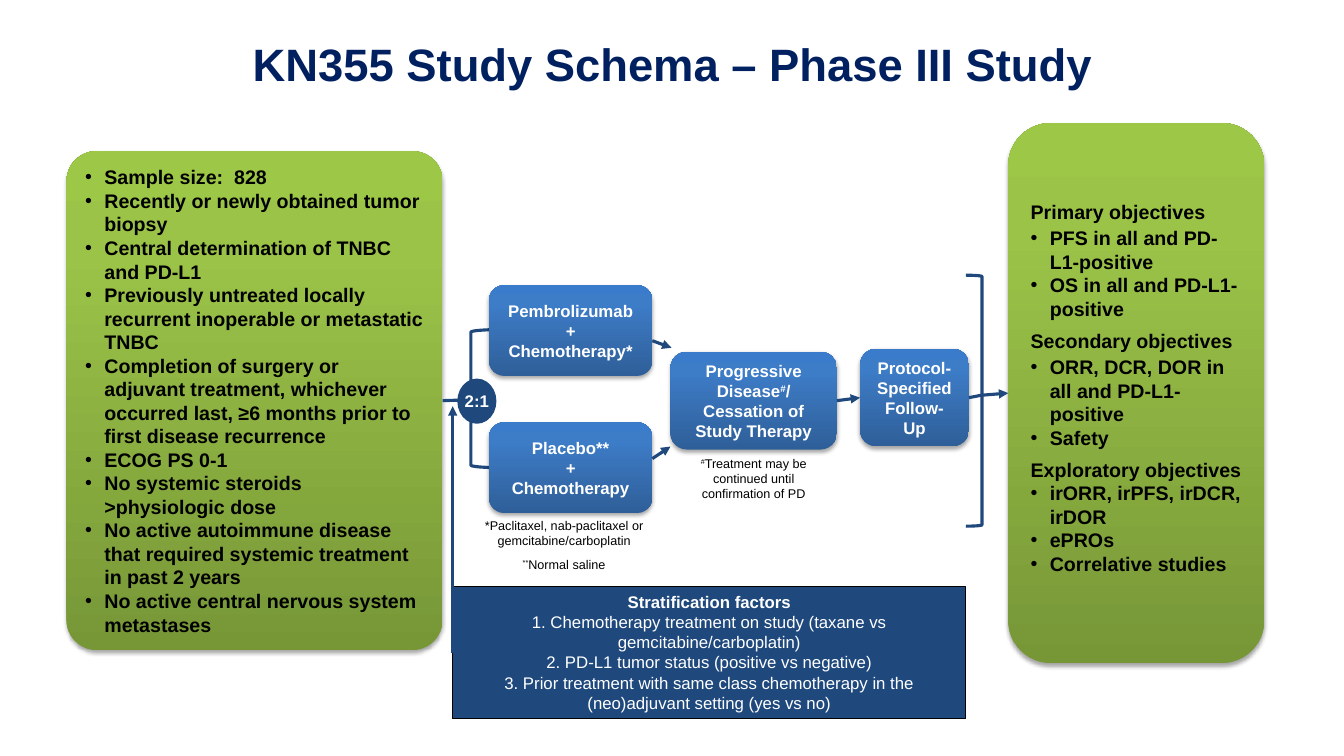
from lxml import etree
from pptx import Presentation
from pptx.dml.color import RGBColor
from pptx.enum.shapes import MSO_CONNECTOR, MSO_SHAPE
from pptx.enum.text import MSO_ANCHOR, PP_ALIGN
from pptx.oxml import parse_xml
from pptx.oxml.ns import nsdecls, qn
from pptx.util import Inches, Pt

ROUNDED, RECTANGLE, OVAL = MSO_SHAPE.ROUNDED_RECTANGLE, MSO_SHAPE.RECTANGLE, MSO_SHAPE.OVAL
LEFT_BRACKET, RIGHT_BRACKET = MSO_SHAPE.LEFT_BRACKET, MSO_SHAPE.RIGHT_BRACKET
STRAIGHT = MSO_CONNECTOR.STRAIGHT
LEFT, CENTER = PP_ALIGN.LEFT, PP_ALIGN.CENTER
TOP, MIDDLE = MSO_ANCHOR.TOP, MSO_ANCHOR.MIDDLE

FONT = "Arial"
COLORS = {"navy": "1F497D", "title": "002060", "black": "000000", "white": "FFFFFF"}
GRADIENTS = {
    "green": [(0, "779737"), (80, "9BC348"), (100, "9DC746")],
    "blue": [(0, "2F5F99"), (80, "3D7CC7"), (100, "3A7CCB")],
}


def write(shape, paragraphs, size, color, bold=False, align=CENTER, anchor=MIDDLE):
    """Each paragraph is (text, options); text between ^ marks is superscript."""
    frame = shape.text_frame
    frame.word_wrap = True
    frame.vertical_anchor = anchor
    for number, (text, options) in enumerate(paragraphs):
        para = frame.paragraphs[0] if number == 0 else frame.add_paragraph()
        para.alignment = align
        para.space_before = Pt(options.get("before", 0))
        para.space_after = Pt(options.get("after", 0))
        if options.get("bullet"):
            properties = para._p.get_or_add_pPr()
            properties.set("marL", str(Inches(0.19)))
            properties.set("indent", str(-Inches(0.19)))
            etree.SubElement(properties, qn("a:buFont")).set("typeface", FONT)
            etree.SubElement(properties, qn("a:buChar")).set("char", "•")
        for part, words in enumerate(text.split("^")):
            if not words:
                continue
            span = para.add_run()
            span.text = words
            span.font.name = FONT
            span.font.size = Pt(size)
            span.font.bold = options.get("bold", bold)
            span.font.color.rgb = RGBColor.from_string(COLORS[color])
            if part % 2:
                span.font._element.set("baseline", "30000")


def add_panel(left, top, width, height, gradient, corner=0.1667):
    """Rounded box with a vertical gradient and a soft shadow below."""
    panel = page.shapes.add_shape(ROUNDED, Inches(left), Inches(top), Inches(width), Inches(height))
    panel.adjustments[0] = corner
    panel.line.fill.background()
    stops = "".join(
        f'<a:gs pos="{place * 1000}"><a:srgbClr val="{color}"/></a:gs>'
        for place, color in GRADIENTS[gradient])
    properties = panel._element.spPr
    properties.find(qn("a:prstGeom")).addnext(parse_xml(
        f'<a:gradFill {nsdecls("a")} rotWithShape="1"><a:gsLst>{stops}</a:gsLst>'
        '<a:lin ang="16200000" scaled="0"/></a:gradFill>'))
    properties.append(parse_xml(
        f'<a:effectLst {nsdecls("a")}><a:outerShdw blurRad="{Pt(3.1)}" dist="{Pt(1.8)}" '
        'dir="5400000" rotWithShape="0"><a:srgbClr val="000000"><a:alpha val="35000"/>'
        '</a:srgbClr></a:outerShdw></a:effectLst>'))
    return panel


deck = Presentation()
deck.slide_width, deck.slide_height = Inches(13.33), Inches(7.5)
page = deck.slides.add_slide(deck.slide_layouts[6])

# Title
title = page.shapes.add_textbox(Inches(0.67), Inches(0.3), Inches(12), Inches(0.65))
write(title, [("KN355 Study Schema – Phase III Study", {})], 32.4, "title", bold=True)

# Eligibility panel
eligibility = add_panel(0.66, 1.5, 3.73, 4.95, "green", corner=0.08)
criteria = [
    "Sample size:  828",
    "Recently or newly obtained tumor biopsy",
    "Central determination of TNBC and PD-L1",
    "Previously untreated locally recurrent inoperable or metastatic TNBC",
    "Completion of surgery or adjuvant treatment, whichever occurred last, "
    "≥6 months prior to first disease recurrence",
    "ECOG PS 0-1",
    "No systemic steroids >physiologic dose",
    "No active autoimmune disease that required systemic treatment in past 2 years",
    "No active central nervous system metastases",
]
write(eligibility, [(text, {"bullet": True}) for text in criteria], 14, "black", True, LEFT)

# Objectives panel
objectives = add_panel(10, 1.22, 2.54, 5.36, "green")
objectives.text_frame.margin_top = Inches(0.64)
write(objectives, [
    ("Primary objectives", {"after": 2}),
    ("PFS in all and PD-L1-positive", {"bullet": True}),
    ("OS in all and PD-L1-positive", {"bullet": True, "after": 6}),
    ("Secondary objectives", {"after": 2}),
    ("ORR, DCR, DOR in all and PD-L1-positive", {"bullet": True}),
    ("Safety", {"bullet": True}),
    ("Exploratory objectives", {"before": 6}),
    ("irORR, irPFS, irDCR, irDOR", {"bullet": True}),
    ("ePROs", {"bullet": True}),
    ("Correlative studies", {"bullet": True}),
], 14, "black", True, LEFT, TOP)

# Brackets around the treatment path
for kind, left, top, width, height in [
    (LEFT_BRACKET, 4.67, 3.27, 0.3, 1.37),
    (RIGHT_BRACKET, 9.58, 2.73, 0.16, 2.49),
]:
    bracket = page.shapes.add_shape(kind, Inches(left), Inches(top), Inches(width), Inches(height))
    bracket.shadow.inherit = False
    bracket.fill.background()
    bracket.line.color.rgb = RGBColor.from_string(COLORS["navy"])
    bracket.line.width = Pt(2.25)

# Stratification box and randomization circle
solid_shapes = {}
for name, kind, left, top, width, height, outline, weight in [
    ("stratification", RECTANGLE, 4.49, 5.82, 5.09, 1.31, "black", 0.75),
    ("ratio", OVAL, 4.55, 3.77, 0.36, 0.42, "navy", 2),
]:
    box = page.shapes.add_shape(kind, Inches(left), Inches(top), Inches(width), Inches(height))
    box.shadow.inherit = False
    box.fill.solid()
    box.fill.fore_color.rgb = RGBColor.from_string(COLORS["navy"])
    box.line.color.rgb = RGBColor.from_string(COLORS[outline])
    box.line.width = Pt(weight)
    solid_shapes[name] = box
stratification, ratio = solid_shapes["stratification"], solid_shapes["ratio"]
write(stratification, [
    ("Stratification factors", {"bold": True}),
    ("1. Chemotherapy treatment on study (taxane vs gemcitabine/carboplatin)", {}),
    ("2. PD-L1 tumor status (positive vs negative)", {}),
    ("3. Prior treatment with same class chemotherapy in the (neo)adjuvant setting (yes vs no)", {}),
], 12, "white", anchor=TOP)
write(ratio, [("2:1", {})], 12, "white", bold=True)
ratio.text_frame.margin_left = ratio.text_frame.margin_right = 0
ratio.text_frame.word_wrap = False

# Treatment steps
steps = {}
for name, left, top, width, height, lines in [
    ("follow-up", 8.53, 3.46, 1.08, 0.97, ["Protocol-Specified Follow-Up"]),
    ("progression", 6.65, 3.49, 1.65, 0.97,
     ["Progressive Disease^#^/", "Cessation of Study Therapy"]),
    ("pembrolizumab", 4.85, 2.83, 1.62, 0.9, ["Pembrolizumab +", "Chemotherapy*"]),
    ("placebo", 4.85, 4.19, 1.62, 0.9, ["Placebo**", "+", "Chemotherapy"]),
]:
    steps[name] = add_panel(left, top, width, height, "blue")
    write(steps[name], [(line, {}) for line in lines], 12, "white", bold=True)

# Footnotes
for left, top, width, height, notes in [
    (6.65, 4.47, 1.65, 0.56, [("^#^Treatment may be continued until confirmation of PD", {})]),
    (4.53, 5.09, 2.13, 0.64, [
        ("*Paclitaxel, nab-paclitaxel or", {}),
        ("gemcitabine/carboplatin", {"after": 6}),
        ("^**^Normal saline", {})]),
]:
    footnote = page.shapes.add_textbox(Inches(left), Inches(top), Inches(width), Inches(height))
    write(footnote, notes, 9, "black", anchor=TOP)

# Connectors: start, end, arrowhead, joined start (shape, side), joined end
for x1, y1, x2, y2, arrow, start, end in [
    (4.39, 3.97, 4.55, 3.97, False, (eligibility, 3), None),
    (9.75, 3.92, 9.97, 3.92, True, None, (objectives, 1)),
    (8.3, 3.96, 8.53, 3.96, True, (steps["progression"], 3), (steps["follow-up"], 1)),
    (9.61, 3.92, 9.74, 3.92, False, (steps["follow-up"], 3), None),
    (6.47, 3.38, 6.66, 3.45, True, None, None),
    (6.47, 4.55, 6.65, 4.43, True, None, None),
    (4.49, 6.48, 4.49, 4.03, True, (stratification, 1), None),
]:
    link = page.shapes.add_connector(STRAIGHT, Inches(x1), Inches(y1), Inches(x2), Inches(y2))
    if start:
        link.begin_connect(*start)
    if end:
        link.end_connect(*end)
    link.line.color.rgb = RGBColor.from_string(COLORS["navy"])
    link.line.width = Pt(2.25)
    if arrow:
        etree.SubElement(link.line._get_or_add_ln(), qn("a:tailEnd")).set("type", "triangle")
    etree.SubElement(link._element.spPr, qn("a:effectLst"))

deck.save("out.pptx")
